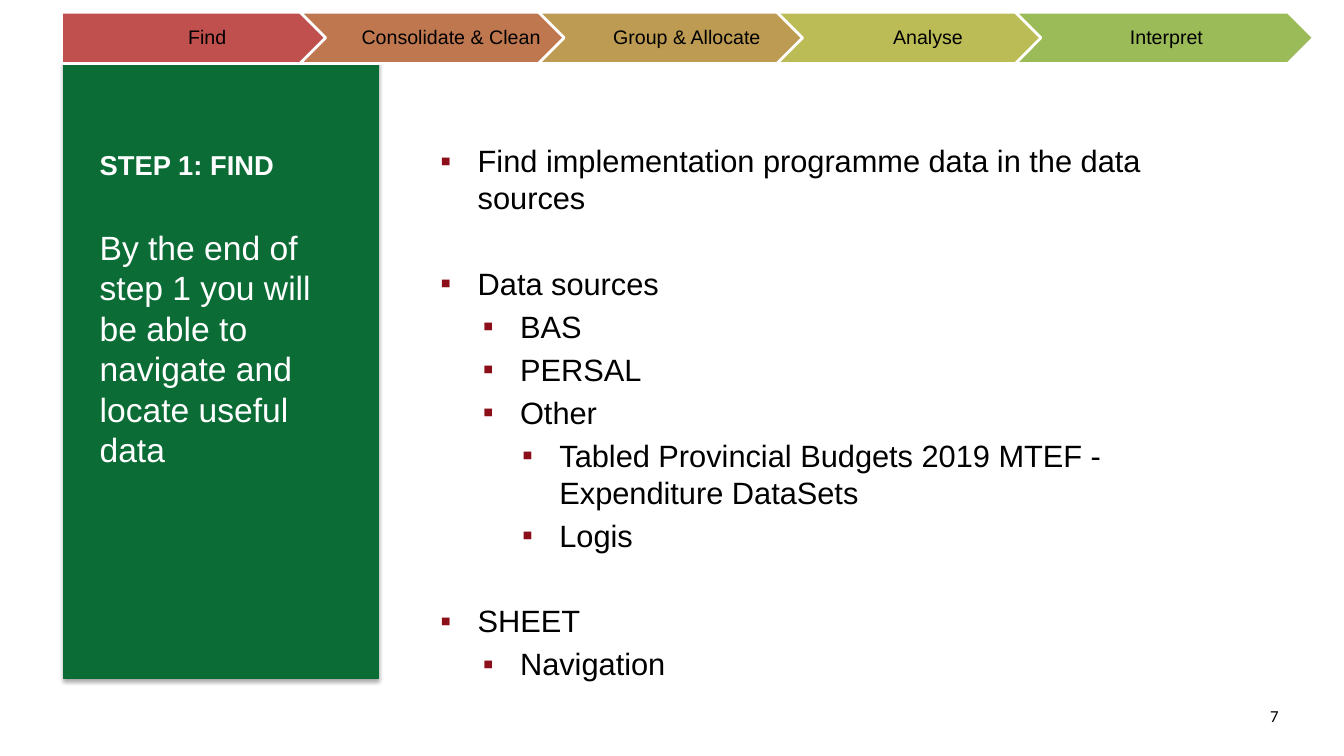
from lxml import etree
from pptx import Presentation
from pptx.dml.color import RGBColor
from pptx.enum.shapes import MSO_SHAPE
from pptx.enum.text import MSO_ANCHOR, PP_ALIGN
from pptx.oxml.ns import qn
from pptx.util import Inches, Pt

RECTANGLE, PENTAGON, CHEVRON = MSO_SHAPE.RECTANGLE, MSO_SHAPE.PENTAGON, MSO_SHAPE.CHEVRON
TOP, MIDDLE, BOTTOM = MSO_ANCHOR.TOP, MSO_ANCHOR.MIDDLE, MSO_ANCHOR.BOTTOM
LEFT, CENTER, RIGHT = PP_ALIGN.LEFT, PP_ALIGN.CENTER, PP_ALIGN.RIGHT

BLACK = RGBColor(0x00, 0x00, 0x00)
WHITE = RGBColor(0xFF, 0xFF, 0xFF)
PANEL_GREEN = RGBColor(0x0B, 0x6C, 0x36)
PANEL_EDGE = RGBColor(0x08, 0x6C, 0x35)
BULLET_RED = RGBColor(0x8B, 0x0E, 0x18)

STAGES = [
    ("Find", RGBColor(0xC0, 0x50, 0x4D)),
    ("Consolidate & Clean", RGBColor(0xBF, 0x77, 0x50)),
    ("Group & Allocate ", RGBColor(0xBD, 0x9B, 0x53)),
    ("Analyse", RGBColor(0xBC, 0xBC, 0x56)),
    ("Interpret", RGBColor(0x9B, 0xBB, 0x59)),
]
STAGE_LEFT, STAGE_PITCH = 0.61, (10.07 - 0.61) / 4

# Level, text, space before in points
TOPICS = [
    (0, "Find implementation programme data in the data sources", 0),
    (0, "Data sources", 35),
    (1, "BAS", 4.4),
    (1, "PERSAL", 4.4),
    (1, "Other", 4.4),
    (2, "Tabled Provincial Budgets 2019 MTEF - Expenditure DataSets", 4.4),
    (2, "Logis", 4.4),
    (0, "SHEET", 35),
    (1, "Navigation", 4.4),
]
LEVEL_INDENTS = [0.37, 0.79, 1.18]
BULLET_HANG = 0.37


def set_frame(frame, anchor=TOP, margins=(0.1, 0.05, 0.1, 0.05)):
    """Wrap and anchor a text frame; margins are left, top, right, bottom."""
    left, top, right, bottom = (Inches(margin) for margin in margins)
    layout = {
        "word_wrap": True,
        "vertical_anchor": anchor,
        "margin_left": left,
        "margin_top": top,
        "margin_right": right,
        "margin_bottom": bottom,
    }
    for name, value in layout.items():
        setattr(frame, name, value)


def write(paragraph, text, size, color, align=LEFT, bold=False, font="Arial"):
    paragraph.alignment = align
    run = paragraph.add_run()
    run.text = text
    for name, value in {"name": font, "size": Pt(size), "bold": bold}.items():
        setattr(run.font, name, value)
    run.font.color.rgb = color


def add_text_frame(slide, box, **layout):
    frame = slide.shapes.add_textbox(*(Inches(length) for length in box)).text_frame
    set_frame(frame, **layout)
    return frame


def add_filled_shape(slide, kind, box, fill, edge, edge_width):
    shape = slide.shapes.add_shape(kind, *(Inches(length) for length in box))
    shape.shadow.inherit = False
    shape.fill.solid()
    shape.fill.fore_color.rgb = fill
    shape.line.color.rgb = edge
    shape.line.width = Pt(edge_width)
    return shape


def add_drop_shadow(shape):
    effects = shape._element.spPr.find(qn("a:effectLst"))
    shadow = etree.SubElement(
        effects, qn("a:outerShdw"), blurRad=str(Pt(3.1)), dist=str(Pt(1.8)),
        dir="5400000", rotWithShape="0")
    color = etree.SubElement(shadow, qn("a:srgbClr"), val=str(BLACK))
    etree.SubElement(color, qn("a:alpha"), val="35000")


def add_bullet(paragraph, level):
    paragraph.level = level
    properties = paragraph._p.get_or_add_pPr()
    properties.set("marL", str(Inches(LEVEL_INDENTS[level])))
    properties.set("indent", str(Inches(-BULLET_HANG)))
    color = etree.SubElement(properties, qn("a:buClr"))
    etree.SubElement(color, qn("a:srgbClr"), val=str(BULLET_RED))
    etree.SubElement(properties, qn("a:buFont"), typeface="Arial")
    etree.SubElement(properties, qn("a:buChar"), char="▪")


def add_step_panel(slide):
    panel = add_filled_shape(slide, RECTANGLE, (0.63, 0.34, 3.12, 6.39),
                             PANEL_GREEN, PANEL_EDGE, 0.75)
    add_drop_shadow(panel)
    heading = add_text_frame(slide, (0.89, 0.49, 2.85, 1.35), anchor=BOTTOM)
    write(heading.paragraphs[0], "STEP 1: FIND", 19.5, WHITE, bold=True)
    goal = add_text_frame(slide, (0.89, 2.2, 2.53, 3.36)).paragraphs[0]
    goal.line_spacing = Pt(28.9)
    write(goal, "By the end of step 1 you will be able to navigate and locate useful data",
          24, WHITE)


def add_topics(slide):
    frame = add_text_frame(slide, (4.27, 0.76, 7.87, 5.57), margins=(0.1, 0.65, 0.1, 0.05))
    for index, (level, text, space_before) in enumerate(TOPICS):
        topic = frame.add_paragraph() if index else frame.paragraphs[0]
        add_bullet(topic, level)
        topic.line_spacing = Pt(26.3)
        if space_before:
            topic.space_before = Pt(space_before)
        write(topic, text, 22, BLACK)


def add_stage_arrows(slide):
    for index, (label, color) in enumerate(STAGES):
        box = (STAGE_LEFT + index * STAGE_PITCH, 0.12, 2.96, 0.51)
        arrow = add_filled_shape(slide, CHEVRON if index else PENTAGON, box, color, WHITE, 2)
        set_frame(arrow.text_frame, MIDDLE, (0.06 if index else 0.08, 0.04, 0.02, 0.04))
        paragraph = arrow.text_frame.paragraphs[0]
        paragraph.line_spacing = 0.9
        write(paragraph, label, 14, BLACK, CENTER)


def add_page_number(slide):
    frame = add_text_frame(slide, (12.02, 6.95, 0.76, 0.39))
    write(frame.paragraphs[0], "7", 12, BLACK, RIGHT, font="Calibri")


def main():
    deck = Presentation()
    deck.slide_width, deck.slide_height = Inches(13.33), Inches(7.5)
    slide = deck.slides.add_slide(deck.slide_layouts[6])
    add_step_panel(slide)
    add_page_number(slide)
    add_topics(slide)
    add_stage_arrows(slide)
    deck.save("out.pptx")


if __name__ == "__main__":
    main()
